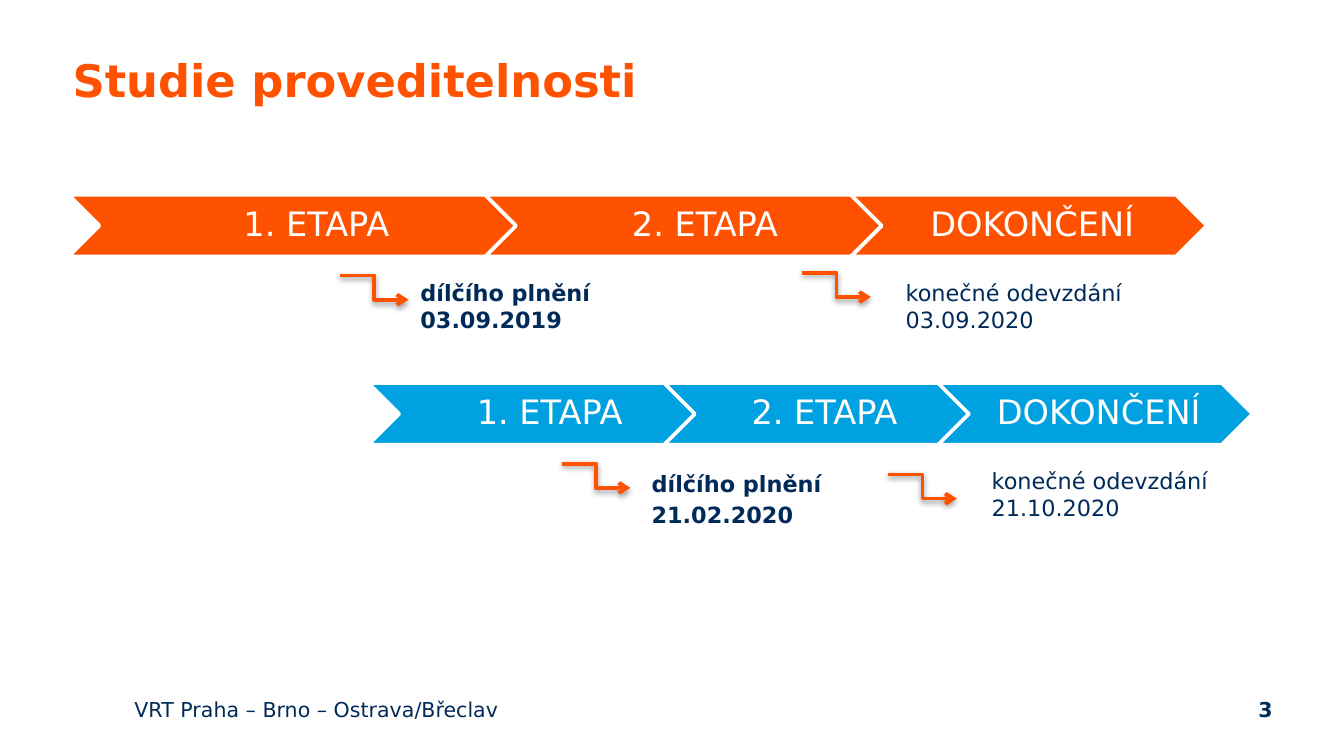
from lxml.etree import SubElement
from pptx import Presentation
from pptx.dml.color import RGBColor
from pptx.enum.shapes import MSO_CONNECTOR, MSO_SHAPE
from pptx.enum.text import MSO_ANCHOR, MSO_AUTO_SIZE, PP_ALIGN
from pptx.oxml import parse_xml
from pptx.oxml.ns import nsdecls, qn
from pptx.util import Inches, Pt

ORANGE = RGBColor(0xFF, 0x52, 0x00)
BLUE = RGBColor(0x00, 0xA1, 0xE0)
NAVY = RGBColor(0x00, 0x2B, 0x59)
WHITE = RGBColor(0xFF, 0xFF, 0xFF)
SHADOW = (
    f'<a:effectLst {nsdecls("a")}>'
    '<a:outerShdw blurRad="40000" dist="20000" dir="5400000" rotWithShape="0">'
    '<a:srgbClr val="000000"><a:alpha val="38000"/></a:srgbClr>'
    '</a:outerShdw></a:effectLst>'
)

deck = Presentation()
deck.slide_width = Inches(10)
deck.slide_height = deck.slide_width * 9 // 16
col = deck.slide_width / 100
row = deck.slide_height / 56.25
slide = deck.slides.add_slide(deck.slide_layouts[5])
shapes = slide.shapes


def place(left, top, wide, high):
    return round(left * col), round(top * row), round(wide * col), round(high * row)


def write(frame, text, size=12, color=NAVY, bold=False, align=PP_ALIGN.LEFT,
          anchor=MSO_ANCHOR.TOP, inset=(0, 0, 0, 0), fit=MSO_AUTO_SIZE.NONE,
          lead=1.0, gap=0):
    frame.text = text
    frame.word_wrap = True
    frame.auto_size = fit
    frame.vertical_anchor = anchor
    (frame.margin_left, frame.margin_top,
     frame.margin_right, frame.margin_bottom) = [Inches(side) for side in inset]
    for rank, para in enumerate(frame.paragraphs):
        para.alignment = align
        para.line_spacing = lead
        para.space_before = Pt(gap if rank else 0)
        font = para.font
        font.name, font.size, font.bold = "DejaVu Sans", Pt(size), bold
        font.color.rgb = color


title = shapes.title
title.left, title.top, title.width, title.height = place(5.4, 3.9, 89.2, 8.8)
write(title.text_frame, "Studie proveditelnosti", size=24, color=ORANGE, bold=True)

for text, left, wide, bold, align in [
    ("VRT Praha – Brno – Ostrava/Břeclav", 10, 62.8, False, PP_ALIGN.LEFT),
    ("3", 89.4, 5.3, True, PP_ALIGN.RIGHT),
]:
    box = shapes.add_textbox(*place(left, 51.9, wide, 1.8))
    write(box.text_frame, text, size=11, bold=bold, align=align,
          anchor=MSO_ANCHOR.MIDDLE)

stages = ["1. ETAPA", "2. ETAPA", "DOKONČENÍ"]
for top, fill, spans in [
    (14.5, ORANGE, [(5.1, 36.4), (36.1, 32.2), (63.3, 26.5)]),
    (28.5, BLUE, [(27.4, 26.5), (49.4, 23.4), (69.8, 23.4)]),
]:
    for stage, (left, wide) in zip(stages, spans):
        step = shapes.add_shape(MSO_SHAPE.CHEVRON, *place(left, top, wide, 4.6))
        step.shadow.inherit = False
        step.fill.solid()
        step.fill.fore_color.rgb = fill
        step.line.color.rgb = WHITE
        step.line.width = Pt(2)
        write(step.text_frame, stage, size=18, color=WHITE, align=PP_ALIGN.CENTER,
              anchor=MSO_ANCHOR.MIDDLE, inset=(0.08, 0.03, 0.03, 0.03), lead=0.9)

for left, top in [(25.3, 20.5), (59.7, 20.3), (41.8, 34.5), (66.1, 35.3)]:
    start = place(left, top, 5.1, 1.8)
    arrow = shapes.add_connector(MSO_CONNECTOR.ELBOW, start[0], start[1],
                                 start[0] + start[2], start[1] + start[3])
    arrow.line.color.rgb = ORANGE
    arrow.line.width = Pt(2)
    SubElement(arrow.line._get_or_add_ln(), qn("a:tailEnd"), type="arrow")
    arrow._element.spPr.append(parse_xml(SHADOW))

for text, left, top, wide, high, bold in [
    ("dílčího plnění 03.09.2019", 30.3, 20.3, 23.6, 5, True),
    ("konečné odevzdání 03.09.2020", 66.4, 20.3, 20.8, 5, False),
    ("dílčího plnění\n21.02.2020", 47.5, 34.5, 14.8, 5.3, True),
    ("konečné odevzdání 21.10.2020", 72.8, 34.3, 20.8, 5, False),
]:
    box = shapes.add_textbox(*place(left, top, wide, high))
    write(box.text_frame, text, bold=bold, inset=(0.1, 0.05, 0.1, 0.05),
          fit=MSO_AUTO_SIZE.SHAPE_TO_FIT_TEXT, gap=2.4)

deck.save("out.pptx")
